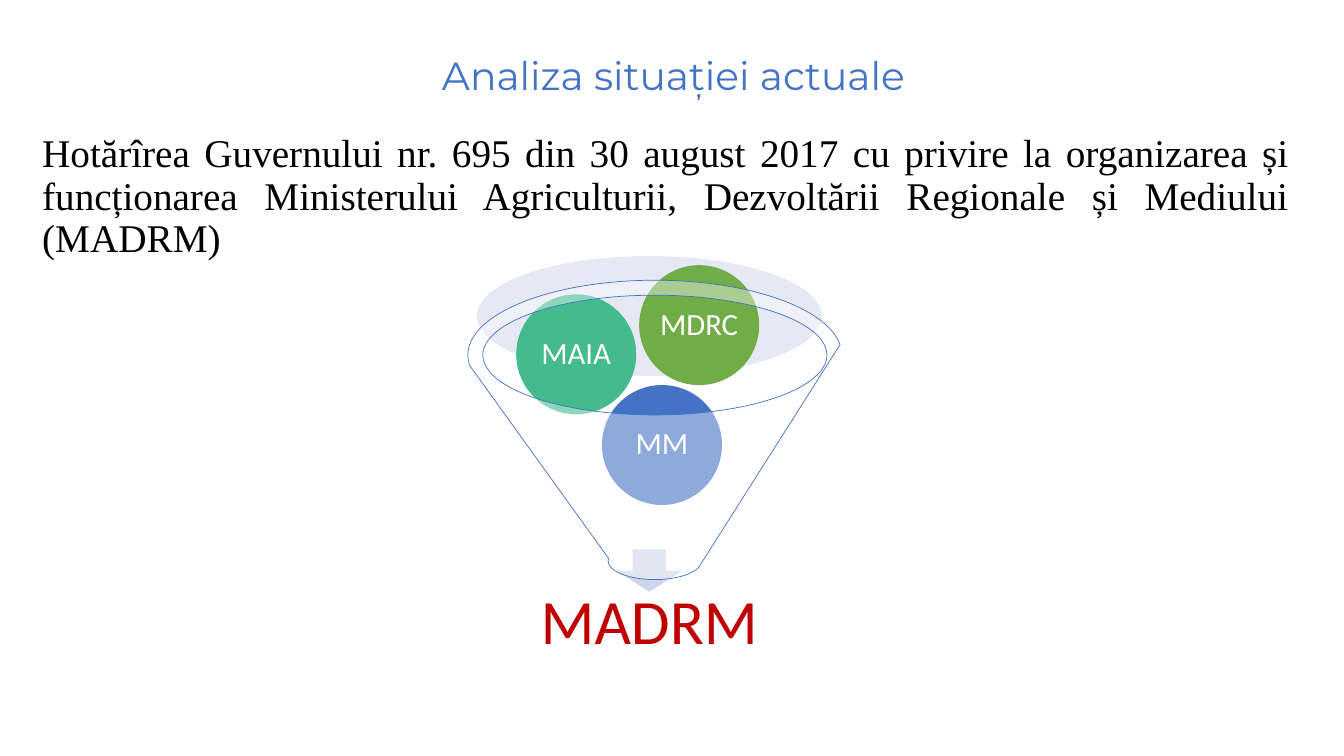
from pptx import Presentation, util as u
from pptx.dml.color import RGBColor
from pptx.enum import shapes, text
from pptx.oxml.ns import qn
from lxml import etree

WIDE, HIGH = u.Inches(13.33), u.Inches(7.5)
KIND = shapes.MSO_SHAPE
MID = text.MSO_ANCHOR.MIDDLE
TOP = text.MSO_ANCHOR.TOP
ROUND = (8.93, 15.87)
BALLS = [
    ("MM", 44.79, 50.93, "4472C4"),
    ("MAIA", 38.41, 38.93, "43BB8D"),
    ("MDRC", 47.56, 35.07, "70AD47"),
]


def paint(color, tint):
    """Set a colour from a hex string."""
    color.rgb = RGBColor.from_string(tint)


def apply(thing, form):
    """Set each attribute named in a dict."""
    for name, value in form.items():
        setattr(thing, name, value)


def place(x, y, w, h):
    """Turn percent shares of the slide into lengths."""
    return [int(part * side / 100)
            for part, side in zip((x, y, w, h), (WIDE, HIGH) * 2)]


def write(shape, words, size, face, tint, align="CENTER", anchor=MID,
          pad=(0.1, 0.05), wrap=True):
    """Fill a shape with one paragraph."""
    frame = shape.text_frame
    side, edge = map(u.Inches, pad)
    apply(frame, dict(word_wrap=wrap, vertical_anchor=anchor,
                      margin_left=side, margin_right=side,
                      margin_top=edge, margin_bottom=edge))
    para = frame.paragraphs[0]
    apply(para, dict(alignment=getattr(text.PP_ALIGN, align),
                     line_spacing=0.9))
    run = para.add_run()
    run.text = words
    apply(run.font, dict(size=u.Pt(size), name=face))
    paint(run.font.color, tint)


def label(slide, box, *args, **form):
    """Add a text box."""
    write(slide.shapes.add_textbox(*place(*box)), *args, **form)


def draw(slide, kind, box, tint, alpha=None, edge=None):
    """Add a preset shape with a flat fill."""
    shape = slide.shapes.add_shape(kind, *place(*box))
    shape.shadow.inherit = False
    shape.fill.solid()
    paint(shape.fill.fore_color, tint)
    if alpha:
        node = shape.fill._xPr.find(qn("a:solidFill"))[0]
        etree.SubElement(node, qn("a:alpha"), val=str(alpha * 1000))
    if edge:
        paint(shape.line.color, edge)
        shape.line.width = u.Pt(0.5)
    else:
        shape.line.fill.background()
    return shape


def main():
    """Build the slide and save it."""
    deck = Presentation()
    apply(deck, dict(slide_width=WIDE, slide_height=HIGH))
    slide = deck.slides.add_slide(deck.slide_layouts[6])
    label(slide, (12.6, 3.6, 75.02, 13.47), "Analiza situației actuale",
          28, "Montserrat", "4472C4")
    label(slide, (2.4, 17.07, 94.22, 79.2),
          "Hotărîrea Guvernului nr. 695 din 30 august 2017 cu privire la "
          "organizarea și funcționarea Ministerului Agriculturii, "
          "Dezvoltării Regionale și Mediului (MADRM)",
          28, "Times New Roman", "000000", align="JUSTIFY", anchor=TOP)
    draw(slide, KIND.OVAL, (35.48, 33.87, 25.66, 15.87), "C1C9E4", 40)
    draw(slide, KIND.DOWN_ARROW, (45.84, 72.67, 4.95, 5.6), "CFD5EA")
    label(slide, (36.38, 77.2, 23.86, 10.67), "MADRM",
          45, "Calibri", "C00000", pad=(0.35, 0))
    for name, x, y, tint in BALLS:
        ball = draw(slide, KIND.OVAL, (x, y, *ROUND), tint)
        write(ball, name, 22, "Calibri", "FFFFFF",
              pad=(0.03, 0.03), wrap=False)
    draw(slide, KIND.FUNNEL, (34.81, 37.07, 27.83, 39.6), "FFFFFF", 40,
         "4472C4")
    deck.save("out.pptx")


if __name__ == "__main__":
    main()
